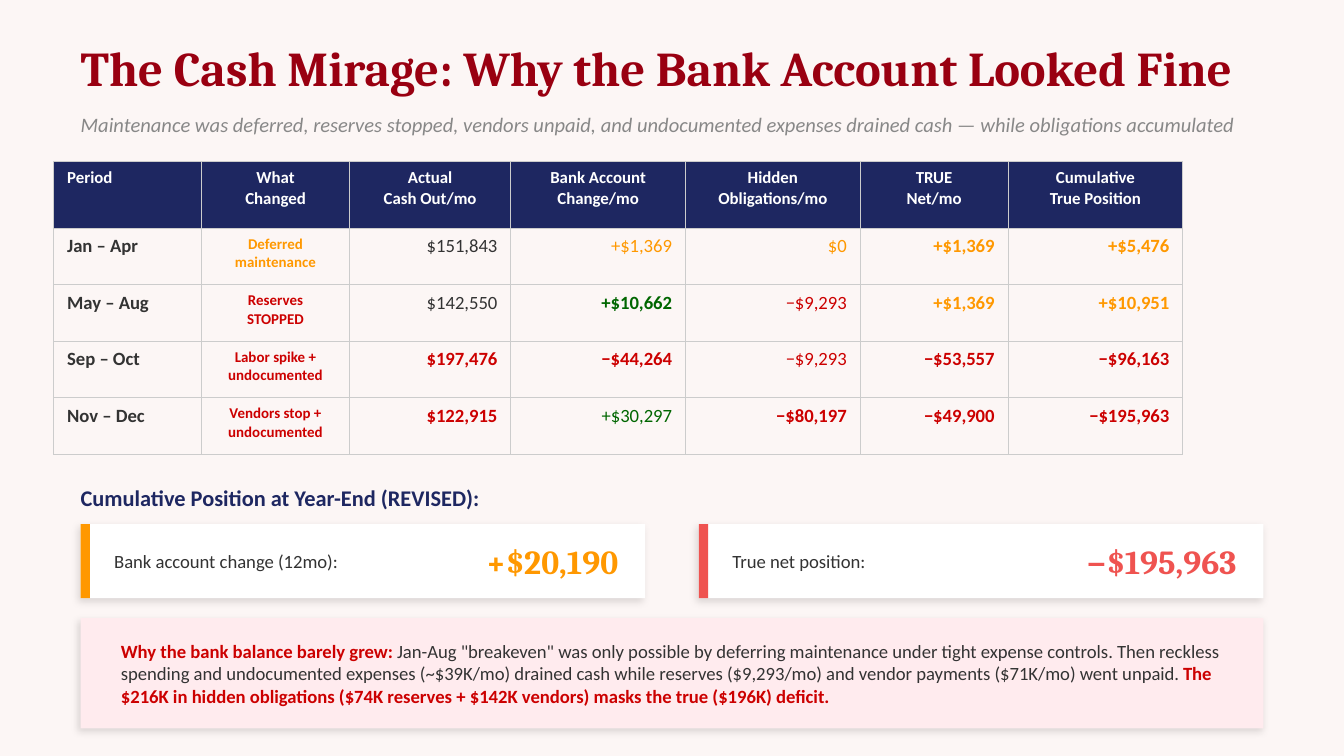
from dataclasses import dataclass

from lxml import etree
from pptx import Presentation
from pptx.dml.color import RGBColor
from pptx.enum.shapes import MSO_SHAPE
from pptx.enum.text import MSO_ANCHOR, PP_ALIGN
from pptx.oxml import parse_xml
from pptx.oxml.ns import nsdecls, qn
from pptx.slide import Slide
from pptx.util import Pt

RECTANGLE = MSO_SHAPE.RECTANGLE
TOP, MIDDLE = MSO_ANCHOR.TOP, MSO_ANCHOR.MIDDLE
LEFT, CENTER, RIGHT = PP_ALIGN.LEFT, PP_ALIGN.CENTER, PP_ALIGN.RIGHT

COLORS = {
    "background": "FCF6F5", "title": "990011", "muted": "888888",
    "navy": "1E2761", "white": "FFFFFF", "ink": "333333",
    "amber": "FF9800", "red": "CC0000", "green": "006600",
    "coral": "EF5350", "blush": "FFEBEE", "border": "CCCCCC",
}
FORMATS = {
    "title": {"name": "Cambria", "size": Pt(26), "bold": True},
    "subtitle": {"name": "Calibri", "size": Pt(11), "italic": True},
    "heading": {"name": "Calibri", "size": Pt(12), "bold": True},
    "figure": {"name": "Cambria", "size": Pt(18), "bold": True},
    "body": {"name": "Calibri", "size": Pt(10), "bold": False},
    "strong": {"name": "Calibri", "size": Pt(10), "bold": True},
    "header": {"name": "Calibri", "size": Pt(9), "bold": True},
    "cause": {"name": "Calibri", "size": Pt(8), "bold": True},
}

COLUMN_WIDTHS = [79.2, 79.2, 86.4, 93.6, 93.6, 79.2, 93.6]
ROW_HEIGHTS = [36] + [30.24] * 4
HEADERS = [
    "Period", "What\nChanged", "Actual\nCash Out/mo", "Bank Account\nChange/mo",
    "Hidden\nObligations/mo", "TRUE\nNet/mo", "Cumulative\nTrue Position",
]
PERIODS = [
    ("Jan – Apr", "Deferred\nmaintenance", "amber", [
        ("$151,843", "body", "ink"), ("+$1,369", "body", "amber"), ("$0", "body", "amber"),
        ("+$1,369", "strong", "amber"), ("+$5,476", "strong", "amber")]),
    ("May – Aug", "Reserves\nSTOPPED", "red", [
        ("$142,550", "body", "ink"), ("+$10,662", "strong", "green"), ("−$9,293", "body", "red"),
        ("+$1,369", "strong", "amber"), ("+$10,951", "strong", "amber")]),
    ("Sep – Oct", "Labor spike +\nundocumented", "red", [
        ("$197,476", "strong", "red"), ("−$44,264", "strong", "red"), ("−$9,293", "body", "red"),
        ("−$53,557", "strong", "red"), ("−$96,163", "strong", "red")]),
    ("Nov – Dec", "Vendors stop +\nundocumented", "red", [
        ("$122,915", "strong", "red"), ("+$30,297", "body", "green"), ("−$80,197", "strong", "red"),
        ("−$49,900", "strong", "red"), ("−$195,963", "strong", "red")]),
]
CARDS = [
    (43.2, "Bank account change (12mo):", "+$20,190", "amber"),
    (374.4, "True net position:", "−$195,963", "coral"),
]
EXPLANATION = [
    ("Why the bank balance barely grew: ", "strong", "red"),
    ('Jan-Aug "breakeven" was only possible by deferring maintenance under tight expense '
     "controls. Then reckless spending and undocumented expenses (~$39K/mo) drained cash while "
     "reserves ($9,293/mo) and vendor payments ($71K/mo) went unpaid. ", "body", "ink"),
    ("The $216K in hidden obligations ($74K reserves + $142K vendors) masks the true ($196K) "
     "deficit.", "strong", "red"),
]


@dataclass
class SlideBuilder:
    """Draw styled elements on one slide, with lengths in points."""

    slide: Slide
    colors: dict
    formats: dict

    def color(self, name):
        return RGBColor.from_string(self.colors[name])

    def background(self, color):
        fill = self.slide.background.fill
        fill.solid()
        fill.fore_color.rgb = self.color(color)

    def run(self, paragraph, text, style, color):
        run = paragraph.add_run()
        run.text = text
        for attribute, value in self.formats[style].items():
            setattr(run.font, attribute, value)
        run.font.color.rgb = self.color(color)

    def text(self, box, runs, alignment=LEFT):
        frame = self.slide.shapes.add_textbox(*map(Pt, box)).text_frame
        settings = {"word_wrap": True, "vertical_anchor": MIDDLE, "margin_left": 0,
                    "margin_top": 0, "margin_right": 0, "margin_bottom": 0}
        for attribute, value in settings.items():
            setattr(frame, attribute, value)
        paragraph = frame.paragraphs[0]
        paragraph.alignment = alignment
        for text, style, color in runs:
            self.run(paragraph, text, style, color)

    def rectangle(self, box, color, shadow=False):
        shape = self.slide.shapes.add_shape(RECTANGLE, *map(Pt, box))
        shape.fill.solid()
        shape.fill.fore_color.rgb = self.color(color)
        shape.line.fill.background()
        shape.shadow.inherit = False
        if shadow:
            effects = shape._element.spPr.find(qn("a:effectLst"))
            effects.append(parse_xml(
                f'<a:outerShdw {nsdecls("a")} blurRad="{Pt(4)}" dist="{Pt(2)}" dir="8100000" '
                'algn="bl" rotWithShape="0"><a:srgbClr val="000000">'
                '<a:alpha val="12000"/></a:srgbClr></a:outerShdw>'))

    def card(self, left, label, figure, color):
        top, height = 280.8, 39.6
        self.rectangle((left, top, 302.4, height), "white", shadow=True)
        self.rectangle((left, top, 5.04, height), color)
        self.text((left + 18, top, 158.4, height), [(label, "body", "ink")])
        self.text((left + 172.8, top, 115.2, height), [(figure, "figure", color)], RIGHT)

    def borders(self, cell):
        properties = cell._tc.get_or_add_tcPr()
        for side in ("lnL", "lnR", "lnT", "lnB"):
            line = etree.SubElement(properties, qn(f"a:{side}"), w=str(Pt(0.5)))
            fill = etree.SubElement(line, qn("a:solidFill"))
            etree.SubElement(fill, qn("a:srgbClr"), val=self.colors["border"])

    def cell(self, cell, text, style, color, alignment, fill=None):
        self.borders(cell)
        if fill:
            cell.fill.solid()
            cell.fill.fore_color.rgb = self.color(fill)
        else:
            cell.fill.background()
        cell.vertical_anchor = TOP
        frame = cell.text_frame
        for index, line in enumerate(text.split("\n")):
            paragraph = frame.add_paragraph() if index else frame.paragraphs[0]
            paragraph.alignment = alignment
            self.run(paragraph, line, style, color)

    def table(self, left, top, headers, periods):
        box = (left, top, sum(COLUMN_WIDTHS), sum(ROW_HEIGHTS))
        table = self.slide.shapes.add_table(
            len(ROW_HEIGHTS), len(COLUMN_WIDTHS), *map(Pt, box)).table
        table.horz_banding = False
        for column, width in zip(table.columns, COLUMN_WIDTHS):
            column.width = Pt(width)
        for row, height in zip(table.rows, ROW_HEIGHTS):
            row.height = Pt(height)
        for index, header in enumerate(headers):
            alignment = CENTER if index else LEFT
            self.cell(table.cell(0, index), header, "header", "white", alignment, "navy")
        for row, (period, cause, cause_color, amounts) in enumerate(periods, 1):
            self.cell(table.cell(row, 0), period, "strong", "ink", LEFT)
            self.cell(table.cell(row, 1), cause, "cause", cause_color, CENTER)
            for column, amount in enumerate(amounts, 2):
                self.cell(table.cell(row, column), *amount, RIGHT)


def main():
    presentation = Presentation()
    presentation.slide_width, presentation.slide_height = Pt(720), Pt(405)
    slide = presentation.slides.add_slide(presentation.slide_layouts[6])
    builder = SlideBuilder(slide, COLORS, FORMATS)
    builder.background("background")
    builder.text((43.2, 14.4, 633.6, 43.2), [
        ("The Cash Mirage: Why the Bank Account Looked Fine", "title", "title")])
    builder.text((43.2, 54, 633.6, 25.2), [
        ("Maintenance was deferred, reserves stopped, vendors unpaid, and undocumented expenses "
         "drained cash — while obligations accumulated", "subtitle", "muted")])
    builder.table(28.8, 86.4, HEADERS, PERIODS)
    builder.text((43.2, 255.6, 633.6, 21.6), [
        ("Cumulative Position at Year-End (REVISED):", "heading", "navy")])
    for card in CARDS:
        builder.card(*card)
    builder.rectangle((43.2, 331.2, 633.6, 59.04), "blush", shadow=True)
    builder.text((64.8, 333.36, 590.4, 54.72), EXPLANATION)
    presentation.save("out.pptx")


if __name__ == "__main__":
    main()
